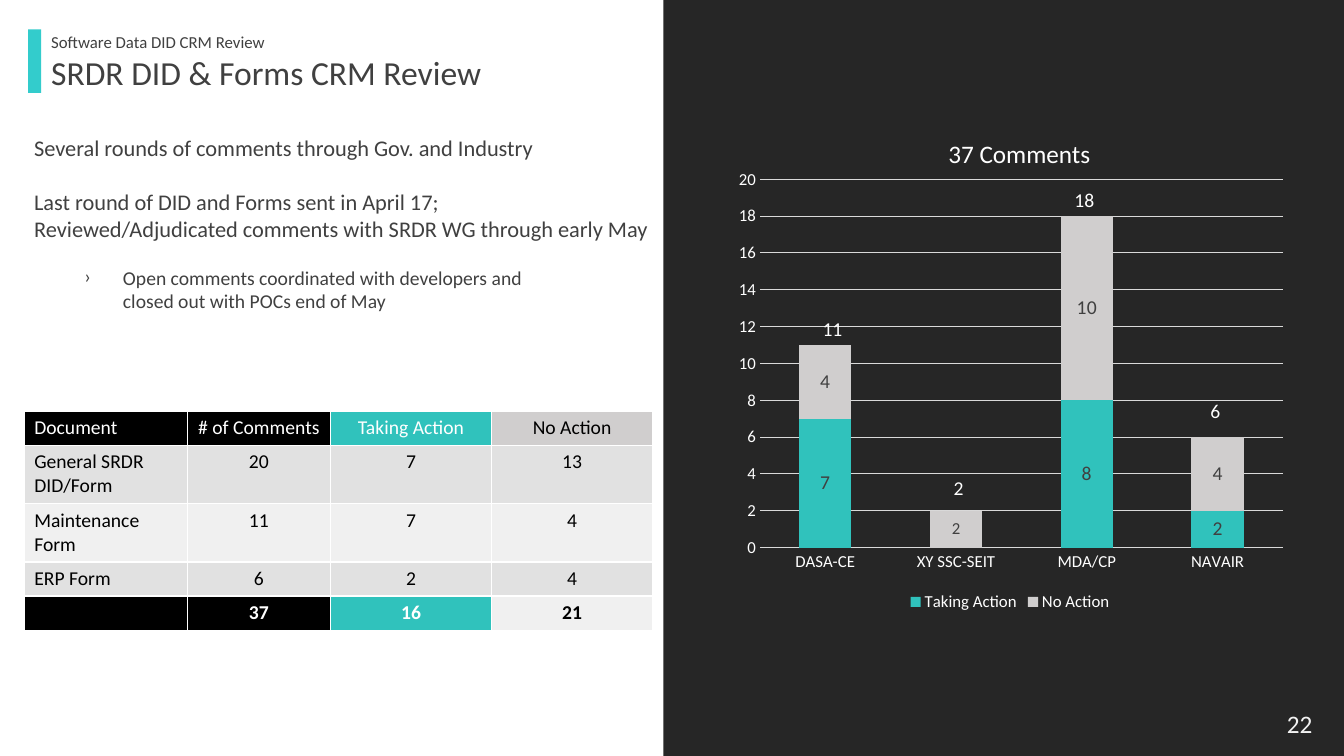
import pptx
import pptx.chart.data
import pptx.dml.color
import pptx.enum.chart
import pptx.enum.shapes
import pptx.enum.text
import pptx.oxml
import pptx.oxml.ns
import pptx.util
from lxml import etree
from pptx.dml.color import RGBColor
from pptx.util import Cm

FONT = "Calibri"
BLACK = RGBColor(0x00, 0x00, 0x00)
WHITE = RGBColor(0xFF, 0xFF, 0xFF)
NEAR_WHITE = RGBColor(0xF2, 0xF2, 0xF2)
PANEL = RGBColor(0x26, 0x26, 0x26)
INK = RGBColor(0x40, 0x40, 0x40)
ACCENT = RGBColor(0x33, 0xCC, 0xCC)
TEAL = RGBColor(0x30, 0xC2, 0xBC)
SILVER = RGBColor(0xD0, 0xCE, 0xCE)
GRID = RGBColor(0xD9, 0xD9, 0xD9)
BAND_DARK = RGBColor(0xE1, 0xE1, 0xE1)
BAND_LIGHT = RGBColor(0xF0, 0xF0, 0xF0)

CENTER = pptx.enum.text.PP_ALIGN.CENTER
qn = pptx.oxml.ns.qn

TABLE_ROWS = [
    ["Document", "# of Comments", "Taking Action", "No Action"],
    ["General SRDR DID/Form", "20", "7", "13"],
    ["Maintenance Form", "11", "7", "4"],
    ["ERP Form", "6", "2", "4"],
    ["", "37", "16", "21"],
]
ROW_FILLS = [
    [BLACK, BLACK, TEAL, SILVER],
    [BAND_DARK] * 4,
    [BAND_LIGHT] * 4,
    [BAND_DARK] * 4,
    [BLACK, BLACK, TEAL, BAND_LIGHT],
]
COLUMN_WIDTHS = [4.11, 3.61, 4.06, 4.06]
ROW_HEIGHTS = [0.86, 1.47, 1.47, 0.86, 0.86]

REVIEWERS = ["DASA-CE", "XY SSC-SEIT", "MDA/CP", "NAVAIR"]
SERIES = [("Taking Action", (7, 0, 8, 2), TEAL), ("No Action", (4, 2, 10, 4), SILVER)]
BAR_TOTALS = [("11", 20.04, 7.87), ("2", 23.22, 11.86), ("18", 26.39, 4.6), ("6", 29.69, 9.93)]


def style_font(font, size, color, bold=False):
    font.name = FONT
    font.size = pptx.util.Pt(size)
    font.color.rgb = color
    font.bold = bold


def write_paragraph(paragraph, text, size, color, bold=False):
    paragraph.text = text
    for run in paragraph.runs:
        style_font(run.font, size, color, bold)


def add_rectangle(slide, left, top, width, height, color):
    shape = slide.shapes.add_shape(
        pptx.enum.shapes.MSO_SHAPE.RECTANGLE, Cm(left), Cm(top), Cm(width), Cm(height))
    shape.shadow.inherit = False
    shape.fill.solid()
    shape.fill.fore_color.rgb = color
    shape.line.fill.background()


def add_text(slide, left, top, width, height, text, size, color, align=None, line_spacing=None):
    box = slide.shapes.add_textbox(Cm(left), Cm(top), Cm(width), Cm(height))
    box.text_frame.word_wrap = True
    paragraph = box.text_frame.paragraphs[0]
    paragraph.alignment = align
    paragraph.line_spacing = line_spacing
    write_paragraph(paragraph, text, size, color)
    return box.text_frame


def add_review_notes(slide):
    frame = add_text(slide, 0.61, 3.25, 16.94, 4.78,
                     "Several rounds of comments through Gov. and Industry", 16, INK)
    last_round = frame.add_paragraph()
    last_round.space_before = pptx.util.Pt(19.5)
    write_paragraph(last_round, "Last round of DID and Forms sent in April 17;\v"
                    "Reviewed/Adjudicated comments with SRDR WG through early May", 16, INK)

    bullet = frame.add_paragraph()
    bullet.level = 1
    bullet.space_before = pptx.util.Pt(17)
    properties = bullet._p.get_or_add_pPr()
    properties.set("marL", str(Cm(2.24)))
    properties.set("indent", str(Cm(-0.97)))
    etree.SubElement(properties, qn("a:buFont"), typeface=FONT)
    etree.SubElement(properties, qn("a:buChar"), char="›")
    write_paragraph(bullet, "Open comments coordinated with developers and\v"
                    "closed out with POCs end of May", 14, INK)


def add_cell_borders(cell):
    properties = cell._tc.get_or_add_tcPr()
    for position, side in enumerate(("lnL", "lnR", "lnT", "lnB")):
        line = etree.Element(qn(f"a:{side}"), w=str(pptx.util.Pt(1)))
        fill = etree.SubElement(line, qn("a:solidFill"))
        etree.SubElement(fill, qn("a:srgbClr"), val=str(WHITE))
        properties.insert(position, line)


def add_comment_table(slide):
    frame = slide.shapes.add_table(
        len(TABLE_ROWS), len(COLUMN_WIDTHS), Cm(0.61), Cm(10.36),
        Cm(sum(COLUMN_WIDTHS)), Cm(sum(ROW_HEIGHTS)))
    table = frame.table
    for column, width in zip(table.columns, COLUMN_WIDTHS):
        column.width = Cm(width)
    for row, height in zip(table.rows, ROW_HEIGHTS):
        row.height = Cm(height)
    for row_index, texts in enumerate(TABLE_ROWS):
        for column_index, text in enumerate(texts):
            cell = table.cell(row_index, column_index)
            fill = ROW_FILLS[row_index][column_index]
            cell.fill.solid()
            cell.fill.fore_color.rgb = fill
            add_cell_borders(cell)
            paragraph = cell.text_frame.paragraphs[0]
            if column_index > 0:
                paragraph.alignment = CENTER
            if text:
                color = WHITE if fill in (BLACK, TEAL) else BLACK
                write_paragraph(paragraph, text, 14, color, row_index == len(TABLE_ROWS) - 1)
            else:
                etree.SubElement(paragraph._p, qn("a:endParaRPr"), sz="1400")


def set_plot_layout(chart, **fractions):
    plot_area = chart._chartSpace.find(".//" + qn("c:plotArea"))
    for existing in plot_area.findall(qn("c:layout")):
        plot_area.remove(existing)
    layout = etree.Element(qn("c:layout"))
    manual = etree.SubElement(layout, qn("c:manualLayout"))
    for tag, value in (("layoutTarget", "inner"), ("xMode", "edge"), ("yMode", "edge"),
                       *fractions.items()):
        etree.SubElement(manual, qn(f"c:{tag}"), val=str(value))
    plot_area.insert(0, layout)


def style_line(line, color):
    line.color.rgb = color
    line.width = pptx.util.Pt(0.75)


def add_comment_chart(slide):
    data = pptx.chart.data.CategoryChartData()
    data.categories = REVIEWERS
    for name, values, _ in SERIES:
        data.add_series(name, values)
    chart = slide.shapes.add_chart(
        pptx.enum.chart.XL_CHART_TYPE.COLUMN_STACKED,
        Cm(18.29), Cm(4.06), Cm(14.33), Cm(11.46), data).chart
    chart.has_title = False
    style_font(chart.font, 12, WHITE)
    set_plot_layout(chart, x=0.06, y=0.04, w=0.92, h=0.81)

    # Legend and axes
    chart.has_legend = True
    chart.legend.position = pptx.enum.chart.XL_LEGEND_POSITION.BOTTOM
    chart.legend.include_in_layout = False
    style_font(chart.legend.font, 12, WHITE)
    for axis in (chart.category_axis, chart.value_axis):
        axis.major_tick_mark = pptx.enum.chart.XL_TICK_MARK.NONE
        style_font(axis.tick_labels.font, 12, WHITE)
    style_line(chart.category_axis.format.line, GRID)
    chart.value_axis.format.line.fill.background()
    style_line(chart.value_axis.major_gridlines.format.line, GRID)
    chart.value_axis.minimum_scale = 0
    chart.value_axis.maximum_scale = 20
    chart.value_axis.major_unit = 2

    # Stacked columns; the label format leaves zero values blank
    plot = chart.plots[0]
    plot.gap_width = 150
    plot.overlap = 100
    plot.vary_by_categories = False
    for series, (_, _, color) in zip(plot.series, SERIES):
        series.format.fill.solid()
        series.format.fill.fore_color.rgb = color
        labels = series.data_labels
        labels.show_value = True
        labels.number_format = "0;;"
        labels.number_format_is_linked = False
        style_font(labels.font, 14, INK)
    style_font(plot.series[1].points[1].data_label.font, 12, INK)


def main():
    presentation = pptx.Presentation()
    presentation.slide_width = Cm(33.87)
    presentation.slide_height = Cm(19.05)
    slide = presentation.slides.add_slide(presentation.slide_layouts[6])

    # Dark panel, title block and page number
    add_rectangle(slide, 16.72, 0, 17.15, 19.05, PANEL)
    add_rectangle(slide, 0.71, 0.74, 0.33, 1.6, ACCENT)
    add_text(slide, 1.04, 1.3, 13.41, 1.42, "SRDR DID & Forms CRM Review", 24, INK, line_spacing=0.9)
    add_text(slide, 1.04, 0.74, 12.01, 0.76, "Software Data DID CRM Review", 12, INK, line_spacing=0.9)
    add_text(slide, 32.18, 17.73, 1.4, 1.02, "22", 18, NEAR_WHITE)

    # Left side
    add_comment_table(slide)
    add_review_notes(slide)

    # Chart with its heading and column totals
    add_comment_chart(slide)
    add_text(slide, 23.65, 3.35, 4.47, 1.02, "37 Comments", 18, WHITE)
    for total, left, top in BAR_TOTALS:
        add_text(slide, left, top, 1.88, 0.86, total, 14, WHITE, CENTER)

    presentation.save("out.pptx")


if __name__ == "__main__":
    main()
